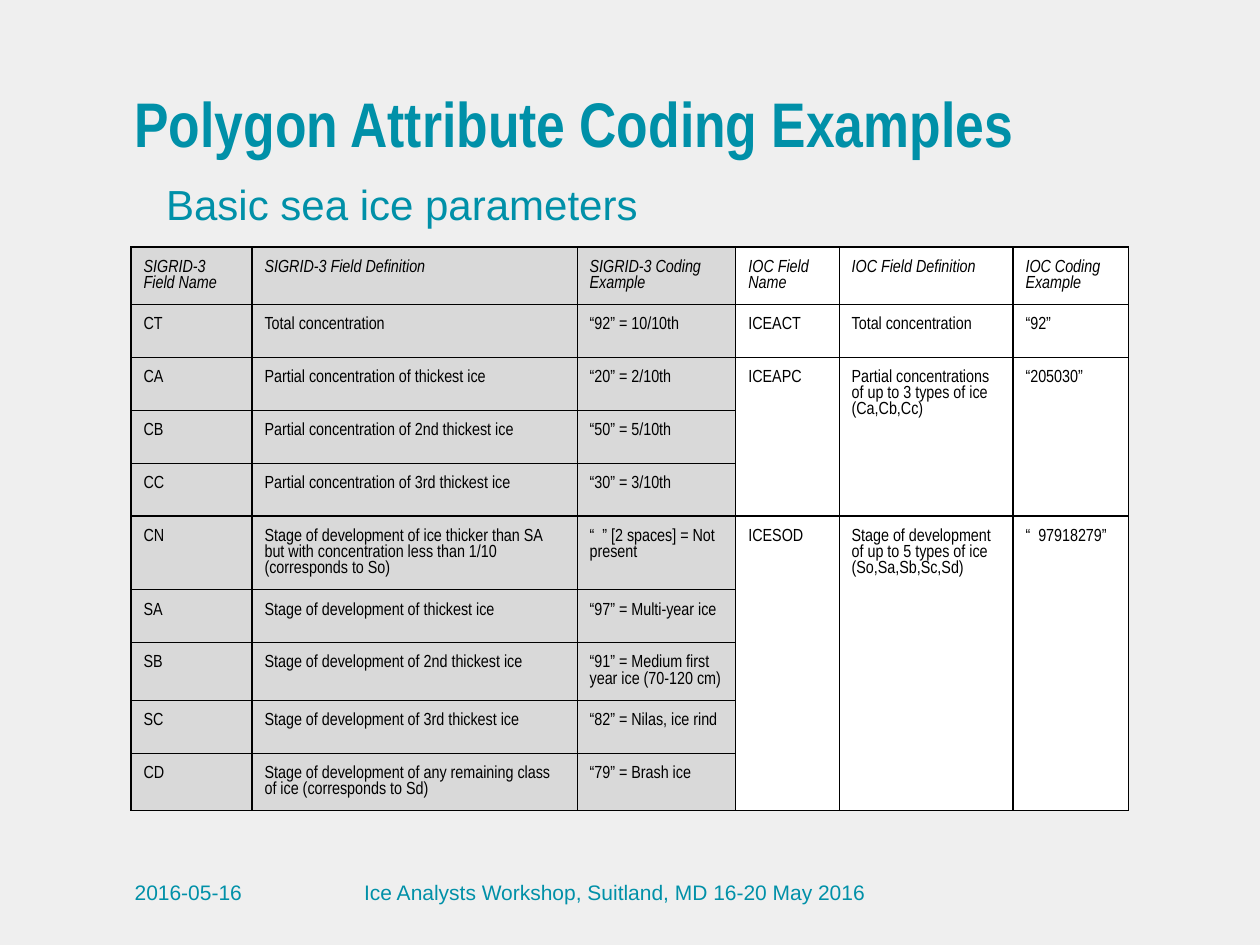
from lxml import etree
from pptx import Presentation
from pptx.dml.color import RGBColor
from pptx.enum import shapes, text
from pptx.oxml.ns import qn
from pptx.util import Inches, Pt

HUES = {"teal": "0090A8", "black": "000000", "gray": "D9D9D9",
        "white": "FFFFFF", "mist": "E9E9E9"}
PAD = 0.1
WIDTHS = [0.96, 2.58, 1.26, 0.82, 1.38, 0.92]
HEIGHT = 0.42
ROWS = [
    ["SIGRID-3 Field Name", "SIGRID-3 Field Definition", "SIGRID-3 Coding Example",
     "IOC Field Name", "IOC Field Definition", "IOC Coding Example"],
    ["CT", "Total concentration", "“92” = 10/10th",
     "ICEACT", "Total concentration", "“92”"],
    ["CA", "Partial concentration of thickest ice", "“20” = 2/10th",
     "ICEAPC", "Partial concentrations of up to 3 types of ice (Ca,Cb,Cc)", "“205030”"],
    ["CB", "Partial concentration of 2nd thickest ice", "“50” = 5/10th"],
    ["CC", "Partial concentration of 3rd thickest ice", "“30” = 3/10th"],
    ["CN", "Stage of development of ice thicker than SA but with concentration "
     "less than 1/10 (corresponds to So)", "“  ” [2 spaces] = Not present",
     "ICESOD", "Stage of development of up to 5 types of ice (So,Sa,Sb,Sc,Sd)",
     "“  97918279”"],
    ["SA", "Stage of development of thickest ice", "“97” = Multi-year ice"],
    ["SB", "Stage of development of 2nd thickest ice",
     "“91” = Medium first year ice (70-120 cm)"],
    ["SC", "Stage of development of 3rd thickest ice", "“82” = Nilas, ice rind"],
    ["CD", "Stage of development of any remaining class of ice (corresponds to Sd)",
     "“79” = Brash ice"],
]
SPANS = [(2, 4), (5, 9)]


class Deck:
    def __init__(self):
        self.show = Presentation()
        self.show.slide_width, self.show.slide_height = Inches(10), Inches(7.5)
        self.slide = self.show.slides.add_slide(self.show.slide_layouts[6])

    def color(self, name):
        return RGBColor.from_string(HUES[name])

    def style(self, para, size, face, hue, bold=False, slant=False):
        font = para.font
        font.size, font.name = Pt(size), face
        font.bold, font.italic = bold, slant
        font.color.rgb = self.color(hue)

    def panel(self, hue, alpha):
        panel = self.slide.shapes.add_shape(
            shapes.MSO_SHAPE.RECTANGLE, 0, 0, self.show.slide_width, self.show.slide_height)
        panel.shadow.inherit = False
        panel.fill.solid()
        panel.fill.fore_color.rgb = self.color(hue)
        panel.line.fill.background()
        tint = panel.fill._xPr.find(".//" + qn("a:srgbClr"))
        etree.SubElement(tint, qn("a:alpha"), val=str(alpha * 1000))

    def pad(self, item):
        item.margin_left = item.margin_right = Inches(PAD)
        item.margin_top = item.margin_bottom = Inches(PAD)

    def label(self, words, area, size, face="Arial", bold=False,
              align=text.PP_ALIGN.LEFT, indent=None):
        box = self.slide.shapes.add_textbox(*map(Inches, area))
        frame = box.text_frame
        frame.word_wrap = True
        self.pad(frame)
        para = frame.paragraphs[0]
        para.text, para.alignment = words, align
        if indent:
            left, first = map(Inches, indent)
            props = para._p.get_or_add_pPr()
            props.set("marL", str(left))
            props.set("indent", str(first))
        self.style(para, size, face, "teal", bold)

    def border(self, cell, hue, width):
        props = cell._tc.get_or_add_tcPr()
        for spot, side in enumerate(("lnL", "lnR", "lnT", "lnB")):
            line = etree.Element(qn("a:" + side), w=str(Pt(width)))
            fill = etree.SubElement(line, qn("a:solidFill"))
            etree.SubElement(fill, qn("a:srgbClr"), val=HUES[hue])
            props.insert(spot, line)

    def cell(self, cell, words, fill, slant):
        self.pad(cell)
        cell.fill.solid()
        cell.fill.fore_color.rgb = self.color(fill)
        self.border(cell, "black", 0.75)
        para = cell.text_frame.paragraphs[0]
        para.text = words
        para.line_spacing = Pt(9.25)
        self.style(para, 10, "Arial Narrow", "black", slant=slant)

    def table(self, left, top):
        area = (left, top, sum(WIDTHS), HEIGHT * len(ROWS))
        grid = self.slide.shapes.add_table(
            len(ROWS), len(WIDTHS), *map(Inches, area)).table
        for col, width in zip(grid.columns, WIDTHS):
            col.width = Inches(width)
        for y, row in enumerate(ROWS):
            grid.rows[y].height = Inches(HEIGHT)
            for x in range(len(WIDTHS)):
                words = row[x] if x < len(row) else ""
                self.cell(grid.cell(y, x), words, "gray" if x < 3 else "white", y == 0)
        for start, end in SPANS:
            for x in range(3, len(WIDTHS)):
                grid.cell(start, x).merge(grid.cell(end, x))


def main():
    deck = Deck()
    deck.panel("mist", 69)
    deck.label("Ice Analysts Workshop, Suitland, MD 16-20 May 2016",
               (2.17, 6.88, 5.42, 0.38), 12, align=text.PP_ALIGN.CENTER)
    deck.label("2016-05-16", (0.97, 6.88, 1.75, 0.37), 12)
    deck.label("Basic sea ice parameters", (0.97, 1.32, 8.06, 5.38), 24,
               indent=(0.5, -0.25))
    deck.label("Polygon Attribute Coding Examples", (0.97, 0.57, 7.97, 1.14), 36,
               face="Arial Narrow", bold=True)
    deck.table(1.04, 1.96)
    deck.show.save("out.pptx")


if __name__ == "__main__":
    main()
